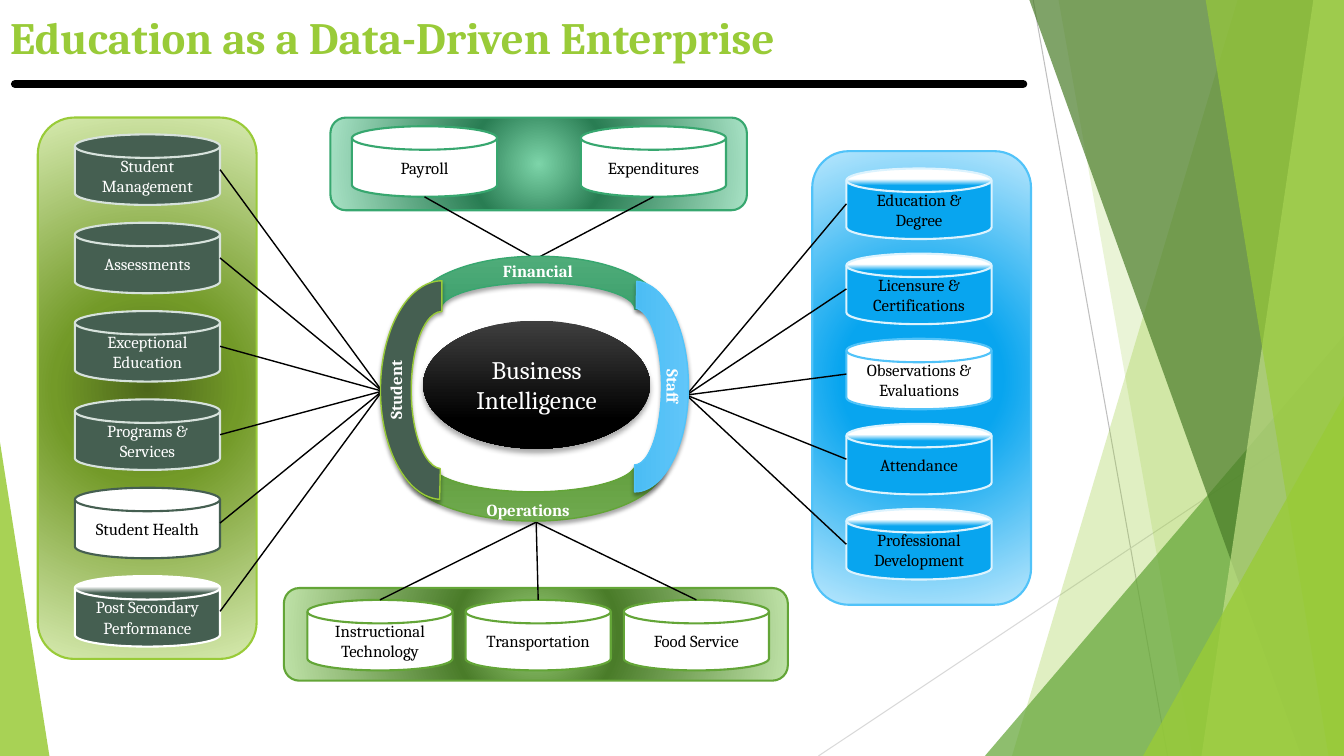
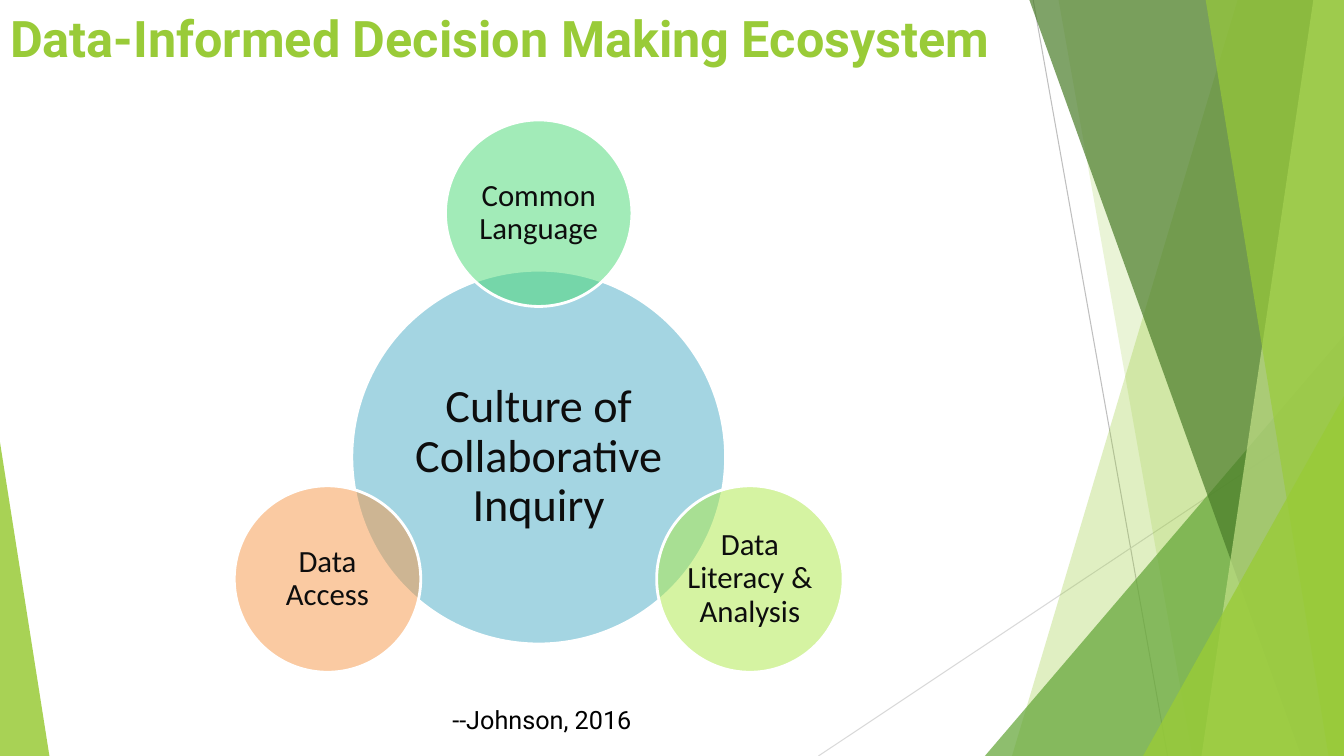
from collections import namedtuple
from math import cos, radians, sin

from pptx import Presentation
from pptx.dml.color import RGBColor
from pptx.enum.shapes import MSO_CONNECTOR, MSO_SHAPE as Preset
from pptx.enum.text import MSO_ANCHOR as Anchor, MSO_AUTO_SIZE as AutoSize, PP_ALIGN as Align
from pptx.oxml import parse_xml
from pptx.oxml.ns import nsdecls, qn
from pptx.shapes.shapetree import SlideShapes
from pptx.util import Pt

WIDTH, HEIGHT = 960, 540
DISK_WIDTH, DISK_HEIGHT = 103.7, 50.4

WHITE = RGBColor(0xFF, 0xFF, 0xFF)
BLACK = RGBColor(0x00, 0x00, 0x00)
INK = RGBColor(0x0D, 0x0D, 0x0D)
CHARCOAL = RGBColor(0x3F, 0x3F, 0x3F)
GREY = RGBColor(0xBF, 0xBF, 0xBF)
PALE_GREY = RGBColor(0xD9, 0xD9, 0xD9)
LIME = RGBColor(0x99, 0xCB, 0x38)
PALE_LIME = RGBColor(0xC2, 0xE0, 0x88)
LEAF = RGBColor(0x63, 0xA5, 0x37)
FOREST = RGBColor(0x4A, 0x7C, 0x29)
JADE = RGBColor(0x37, 0xA7, 0x6F)
SLATE = RGBColor(0x45, 0x5F, 0x51)
MIST = RGBColor(0xD7, 0xE2, 0xDC)
SKY = RGBColor(0x51, 0xC3, 0xF9)
PALE_SKY = RGBColor(0xDC, 0xF3, 0xFE)
AZURE = RGBColor(0x08, 0xA5, 0xEF)
TEAL = RGBColor(0x4B, 0xAC, 0xC6)
MINT = RGBColor(0x47, 0xD8, 0x72)
SPRING = RGBColor(0xAC, 0xE9, 0x46)
ORANGE = RGBColor(0xF7, 0x96, 0x46)

Gradient = namedtuple("Gradient", "stops radial")
DiskStyle = namedtuple("DiskStyle", "fill line ink")


def hex_color(value):
    return RGBColor.from_string(value)


def glow(inner, middle, outer):
    """Radial gradient of a panel, from its centre to its corners."""
    return Gradient(((0, inner), (32, middle), (100, outer)), True)


def shade(top, bottom, start=0, end=78):
    """Vertical gradient."""
    return Gradient(((start, top), (end, bottom)), False)


def assign(target, values):
    for name, value in values.items():
        setattr(target, name, value)


class Deck:
    """Holds the shared style and the slide being drawn."""

    def __init__(self):
        self.presentation = Presentation()
        assign(self.presentation, {"slide_width": Pt(WIDTH), "slide_height": Pt(HEIGHT)})
        self.layout = self.presentation.slide_layouts[5]
        self.shapes = SlideShapes(self.layout.shapes._spTree, self.layout)
        self.draw_facets()

    def draw_facets(self):
        """Draws the angular green decoration once, on the layout."""
        self.line((738, 0), (834, HEIGHT), GREY, 0.75)
        self.line((WIDTH, 290), (584.6, HEIGHT), PALE_GREY, 0.75)
        self.facet(884.2, 722.9, LIME, 30)
        self.facet(756, 851.8, LIME, 20)
        self.corner(703.5, 239.8, 256.5, LEAF, 72)
        self.facet(735.1, 929.5, FOREST, 70)
        self.facet(938.2, 858.2, PALE_LIME, 70)
        self.facet(861.1, 949, LIME, 65)
        self.corner(816.5, 283, 143.5, LIME, 80)
        self.corner(0, 316, 35.3, LIME, 85, peak=0)

    def facet(self, top_left, bottom_left, color, opacity):
        """Band that runs from a slanted left side to the slide's right edge."""
        top = -0.6
        builder = self.shapes.build_freeform(Pt(top_left), Pt(top))
        corners = ((WIDTH, top), (WIDTH, HEIGHT), (bottom_left, HEIGHT))
        builder.add_line_segments([(Pt(x), Pt(y)) for x, y in corners], close=True)
        self.paint(builder.convert_to_shape(), color, opacity=opacity)

    def corner(self, left, top, width, color, opacity, peak=1):
        """Triangle that stands on the slide's bottom edge."""
        triangle = self.shape(Preset.ISOSCELES_TRIANGLE, (left, top, width, HEIGHT - top),
                              color, opacity=opacity)
        triangle.adjustments[0] = peak

    def new_slide(self, title, font, size, box):
        slide = self.presentation.slides.add_slide(self.layout)
        self.shapes = slide.shapes
        heading = slide.shapes.title
        left, top, width, height = map(Pt, box)
        assign(heading, {"left": left, "top": top, "width": width, "height": height})
        self.set_text(heading, title, font, size, LIME, bold=True,
                      align=Align.LEFT, anchor=Anchor.TOP)

    def paint(self, shape, fill, line=None, weight=1.5, opacity=100):
        shape.shadow.inherit = False
        shape.fill.solid()
        solid = shape._element.spPr.find(qn("a:solidFill"))
        if isinstance(fill, Gradient):
            shape._element.spPr.replace(solid, self.gradient_xml(fill))
        else:
            shape.fill.fore_color.rgb = fill
            if opacity < 100:
                solid[0].append(parse_xml(f'<a:alpha {nsdecls("a")} val="{opacity * 1000}"/>'))
        if line is None:
            shape.line.fill.background()
        else:
            shape.line.color.rgb = line
            shape.line.width = Pt(weight)

    def gradient_xml(self, gradient):
        stops = "".join(f'<a:gs pos="{position * 1000}"><a:srgbClr val="{color}"/></a:gs>'
                        for position, color in gradient.stops)
        direction = ('<a:path path="circle"><a:fillToRect l="50000" t="50000" r="50000" '
                     'b="50000"/></a:path>' if gradient.radial
                     else '<a:lin ang="5400000" scaled="0"/>')
        return parse_xml(f'<a:gradFill {nsdecls("a")} rotWithShape="1">'
                         f'<a:gsLst>{stops}</a:gsLst>{direction}</a:gradFill>')

    def cast_shadow(self, shape, blur, distance):
        shape._element.spPr.find(qn("a:effectLst")).append(parse_xml(
            f'<a:outerShdw {nsdecls("a")} blurRad="{Pt(blur)}" dist="{Pt(distance)}" '
            'dir="5400000" rotWithShape="0"><a:srgbClr val="000000">'
            '<a:alpha val="35000"/></a:srgbClr></a:outerShdw>'))

    def shape(self, preset, box, fill, line=None, weight=1.5, opacity=100):
        shape = self.shapes.add_shape(preset, *map(Pt, box))
        self.paint(shape, fill, line, weight, opacity)
        return shape

    def set_text(self, shape, text, font, size, color, bold=False, align=Align.CENTER,
                 anchor=Anchor.MIDDLE, fit=AutoSize.NONE, spacing=None, inset=None):
        frame = shape.text_frame
        frame.text = text
        assign(frame, {"word_wrap": True, "auto_size": fit, "vertical_anchor": anchor})
        if inset is not None:
            sides = ("left", "top", "right", "bottom")
            assign(frame, {f"margin_{side}": Pt(inset) for side in sides})
        for paragraph in frame.paragraphs:
            assign(paragraph, {"alignment": align, "line_spacing": spacing})
            for run in paragraph.runs:
                assign(run.font, {"name": font, "size": Pt(size), "bold": bold})
                run.font.color.rgb = color

    def label(self, box, text, font, size, color, bold=False):
        textbox = self.shapes.add_textbox(*map(Pt, box))
        self.set_text(textbox, text, font, size, color, bold, Align.LEFT, Anchor.TOP,
                      AutoSize.SHAPE_TO_FIT_TEXT)

    def line(self, start, end, color=BLACK, weight=1, round_ends=False):
        line = self.shapes.add_connector(MSO_CONNECTOR.STRAIGHT, *map(Pt, start + end))
        line.line.color.rgb = color
        line.line.width = Pt(weight)
        if round_ends:
            line._element.spPr.find(qn("a:ln")).set("cap", "rnd")
        line._element.spPr.append(parse_xml(f'<a:effectLst {nsdecls("a")}/>'))

    def disk_group(self, panel, glow_fill, outline, first, step, disks, port, hub):
        """Panel of disks, each joined to the hub point.

        step is the (x, y) offset between disks; port is where the line leaves
        a disk, as fractions of its width and height.
        """
        self.shape(Preset.ROUNDED_RECTANGLE, panel, glow_fill, outline)
        for index, (text, style) in enumerate(disks):
            left, top = (start + index * gap for start, gap in zip(first, step))
            disk = self.shape(Preset.FLOWCHART_MAGNETIC_DISK,
                              (left, top, DISK_WIDTH, DISK_HEIGHT), style.fill, style.line)
            self.set_text(disk, text, "Cambria", 12, style.ink)
            self.line((left + port[0] * DISK_WIDTH, top + port[1] * DISK_HEIGHT), hub)

    def ring_part(self, box, rotation, fill, outline, text=""):
        arc = self.shape(Preset.BLOCK_ARC, box, fill, outline, 1)
        arc.rotation = rotation
        for index, value in enumerate((108.71, 0, 0.25)):
            arc.adjustments[index] = value
        self.cast_shadow(arc, 3, 2)
        if text:
            self.set_text(arc, text, "Cambria", 12, WHITE, bold=True, anchor=Anchor.TOP)

    def bubble(self, center, diameter, color, text, size, inset):
        left, top = (value - diameter / 2 for value in center)
        circle = self.shape(Preset.OVAL, (left, top, diameter, diameter), color, WHITE, 2, 50)
        self.set_text(circle, text, "Calibri", size, INK, spacing=0.9, inset=inset)


def draw_enterprise(deck):
    deck.new_slide("Education as a Data-Driven Enterprise", "Cambria", 32, (0, 3, 720, 90))

    jade_disk = DiskStyle(WHITE, JADE, BLACK)
    leaf_disk = DiskStyle(WHITE, LEAF, BLACK)
    slate_disk = DiskStyle(SLATE, MIST, WHITE)
    azure_disk = DiskStyle(shade(WHITE, AZURE, 15, 24), PALE_SKY, BLACK)

    deck.disk_group(
        (236, 84, 297.5, 66.2),
        glow(hex_color("7DD4A9"), hex_color("297D53"), hex_color("A8E2C5")), JADE,
        (251.4, 90.2), (163.5, 0),
        [("Payroll", jade_disk), ("Expenditures", jade_disk)],
        port=(0.5, 1), hub=(382.5, 185))
    deck.disk_group(
        (27, 84, 156.3, 386.7),
        glow(hex_color("4D671B"), hex_color("739A28"), hex_color("D6EAAF")), LIME,
        (53.5, 96), (0, 63.1),
        [("Student Management", slate_disk),
         ("Assessments", slate_disk),
         ("Exceptional Education", slate_disk),
         ("Programs & Services", slate_disk),
         ("Student Health", DiskStyle(WHITE, SLATE, BLACK)),
         ("Post Secondary Performance",
          DiskStyle(shade(WHITE, SLATE, 15, 24), WHITE, WHITE))],
        port=(1, 0.5), hub=(273, 279.4))
    deck.disk_group(
        (202.8, 420, 360, 66.2),
        glow(hex_color("9FD47D"), FOREST, hex_color("BFE2A8")), LEAF,
        (219.6, 428.5), (113, 0),
        [("Instructional Technology", leaf_disk),
         ("Transportation", leaf_disk),
         ("Food Service", leaf_disk)],
        port=(0.5, 0), hub=(383, 373))
    deck.disk_group(
        (580.2, 108, 156.3, 324),
        glow(AZURE, AZURE, hex_color("B9E7FD")), SKY,
        (604.6, 120.4), (0, 60.8),
        [("Education & Degree", azure_disk),
         ("Licensure & Certifications", azure_disk),
         ("Observations & Evaluations", DiskStyle(WHITE, SKY, BLACK)),
         ("Attendance", azure_disk),
         ("Professional Development", azure_disk)],
        port=(0, 0.5), hub=(490.3, 282.2))

    core = deck.shape(Preset.OVAL, (302.3, 229, 162, 91.5), shade(CHARCOAL, BLACK))
    deck.cast_shadow(core, 4, 3)
    deck.set_text(core, "Business\nIntelligence", "Cambria", 18, WHITE)

    deck.ring_part((296, 183, 176.4, 75.6), 0,
                   shade(hex_color("4FAC79"), hex_color("329966")), JADE, "Financial")
    deck.ring_part((286.6, 288.7, 188.6, 83.5), 180,
                   shade(hex_color("6FAA4F"), hex_color("5B9732")), LEAF)
    deck.label((340.6, 353.5, 84.2, 21.6), "Operations", "Cambria", 12, WHITE, bold=True)
    deck.ring_part((237.6, 234.7, 156.2, 87.8), 270, SLATE, LIME, "Student")
    deck.ring_part((378, 237.6, 150.5, 77), 90,
                   shade(hex_color("61C6F9"), hex_color("3DB7F1")), SKY, "Staff")

    deck.line((10.8, 60), (730.8, 60), weight=6, round_ends=True)


def draw_ecosystem(deck):
    deck.new_slide("Data-Informed Decision Making Ecosystem", "Roboto", 36, (0, 1.5, 804, 90))
    deck.label((316, 499.7, 214.6, 29), "--Johnson, 2016", "Roboto", 18, BLACK)

    center_x, center_y, orbit = 384.8, 326.5, 174.2
    deck.bubble((center_x, center_y), 267, TEAL, "Culture of Collaborative Inquiry", 33, 3.6)
    satellites = (("Common Language", MINT),
                  ("Data Literacy & Analysis", SPRING),
                  ("Data Access", ORANGE))
    for index, (text, color) in enumerate(satellites):
        angle = radians(index * 360 / len(satellites) - 90)
        center = (center_x + orbit * cos(angle), center_y + orbit * sin(angle))
        deck.bubble(center, 133.2, color, text, 22, 2)


def main():
    deck = Deck()
    draw_enterprise(deck)
    draw_ecosystem(deck)
    deck.presentation.save("out.pptx")


if __name__ == "__main__":
    main()
